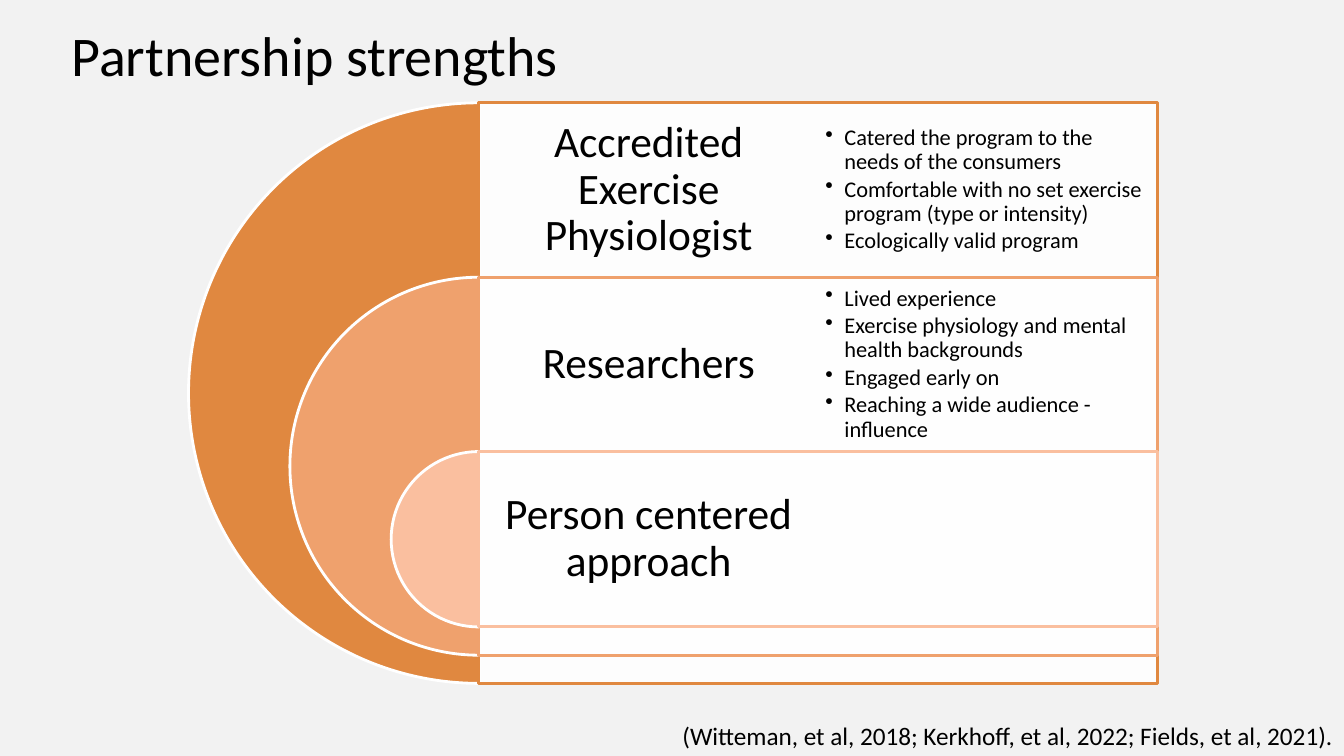
import pptx
import pptx.util
import pptx.dml.color
import pptx.enum.shapes
import pptx.enum.text
import pptx.oxml
import pptx.oxml.ns

Inches = pptx.util.Inches
Pt = pptx.util.Pt
SHAPE = pptx.enum.shapes.MSO_SHAPE
ALIGN = pptx.enum.text.PP_ALIGN
ANCHOR = pptx.enum.text.MSO_ANCHOR

COLORS = {
    "background": "F2F2F2",
    "text": "000000",
    "white": "FFFFFF",
    "outer": "E08840",
    "middle": "EFA16D",
    "inner": "FABF9F",
}

STRENGTHS = [
    ("outer", "Accredited Exercise Physiologist", [
        "Catered the program to the needs of the consumers",
        "Comfortable with no set exercise program (type or intensity)",
        "Ecologically valid program",
    ]),
    ("middle", "Researchers", [
        "Lived experience",
        "Exercise physiology and mental health backgrounds",
        "Engaged early on",
        "Reaching a wide audience - influence",
    ]),
    ("inner", "Person centered approach", []),
]


def rgb(name):
    return pptx.dml.color.RGBColor.from_string(COLORS[name])


def format_font(p, size):
    for r in p.runs:
        r.font.name = "Calibri"
        r.font.size = Pt(size)
        r.font.color.rgb = rgb("text")


def add_bullet(p):
    pPr = p._p.get_or_add_pPr()
    pPr.set("marL", str(Inches(0.19)))
    pPr.set("indent", str(-Inches(0.19)))
    bullet = pptx.oxml.parse_xml(
        f'<a:buChar {pptx.oxml.ns.nsdecls("a")} char="•"/>')
    pPr.append(bullet)


def add_text(s, box, lines, size, inset, align=ALIGN.LEFT, bullets=False):
    tf = s.shapes.add_textbox(*map(Inches, box)).text_frame
    tf.word_wrap = True
    tf.vertical_anchor = ANCHOR.MIDDLE
    tf.margin_left = tf.margin_right = Inches(inset)
    tf.margin_top = tf.margin_bottom = Inches(inset)
    tf.text = "\n".join(lines)
    for p in tf.paragraphs:
        if bullets:
            add_bullet(p)
            p.space_after = Pt(2.4)
        p.alignment = align
        p.line_spacing = 0.9
        format_font(p, size)


def add_outlined(s, kind, box, fill, line):
    sp = s.shapes.add_shape(kind, *map(Inches, box))
    sp.shadow.inherit = False
    sp.fill.solid()
    sp.fill.fore_color.rgb = rgb(fill)
    sp.line.color.rgb = rgb(line)
    sp.line.width = Pt(2)
    return sp


def add_layer(s, left, top, width, diameter, color):
    pie_box = (left - diameter / 2, top, diameter, diameter)
    pie = add_outlined(s, SHAPE.PIE, pie_box, color, "white")
    pie.adjustments[0] = 54
    pie.adjustments[1] = 162
    panel = add_outlined(s, SHAPE.RECTANGLE, (left, top, width, diameter), "white", color)
    fill_color = panel._element.spPr.find(
        pptx.oxml.ns.qn("a:solidFill") + "/" + pptx.oxml.ns.qn("a:srgbClr"))
    fill_color.append(pptx.oxml.parse_xml(
        f'<a:alpha {pptx.oxml.ns.nsdecls("a")} val="90000"/>'))


def add_strengths(s, left, top, width, height):
    center = left + height / 2
    panel_width = width - height / 2
    column = panel_width / 2
    row = 1.73
    shrink = 2.01
    for i, (color, heading, _) in enumerate(STRENGTHS):
        y = top + i * row
        add_layer(s, center, y, panel_width, height - i * shrink, color)
        add_text(s, (center, y, column, row), [heading], 31, 0.13, ALIGN.CENTER)
    for i, (_, _, points) in enumerate(STRENGTHS):
        if points:
            box = (center + column, top + i * row, column, row)
            add_text(s, box, points, 16, 0.07, bullets=True)


def add_title(s, left, top, width, height):
    title = s.shapes.title
    title.left, title.top = Inches(left), Inches(top)
    title.width, title.height = Inches(width), Inches(height)
    tf = title.text_frame
    tf.text = "Partnership strengths"
    tf.vertical_anchor = ANCHOR.MIDDLE
    p = tf.paragraphs[0]
    p.alignment = ALIGN.CENTER
    format_font(p, 40)


def add_citation(s, left, top, width, height):
    sp = s.shapes.add_textbox(*map(Inches, (left, top, width, height)))
    tf = sp.text_frame
    tf.word_wrap = True
    tf.text = "(Witteman, et al, 2018; Kerkhoff, et al, 2022; Fields, et al, 2021)."
    format_font(tf.paragraphs[0], 18)


def main():
    prs = pptx.Presentation()
    prs.slide_width = Inches(13.33)
    prs.slide_height = Inches(7.5)
    s = prs.slides.add_slide(prs.slide_layouts[5])
    s.background.fill.solid()
    s.background.fill.fore_color.rgb = rgb("background")
    add_title(s, 0, 0.16, 6.24, 0.75)
    add_strengths(s, 1.87, 1.02, 9.61, 5.76)
    add_citation(s, 6.67, 7.1, 8.14, 0.4)
    prs.save("out.pptx")


if __name__ == "__main__":
    main()
